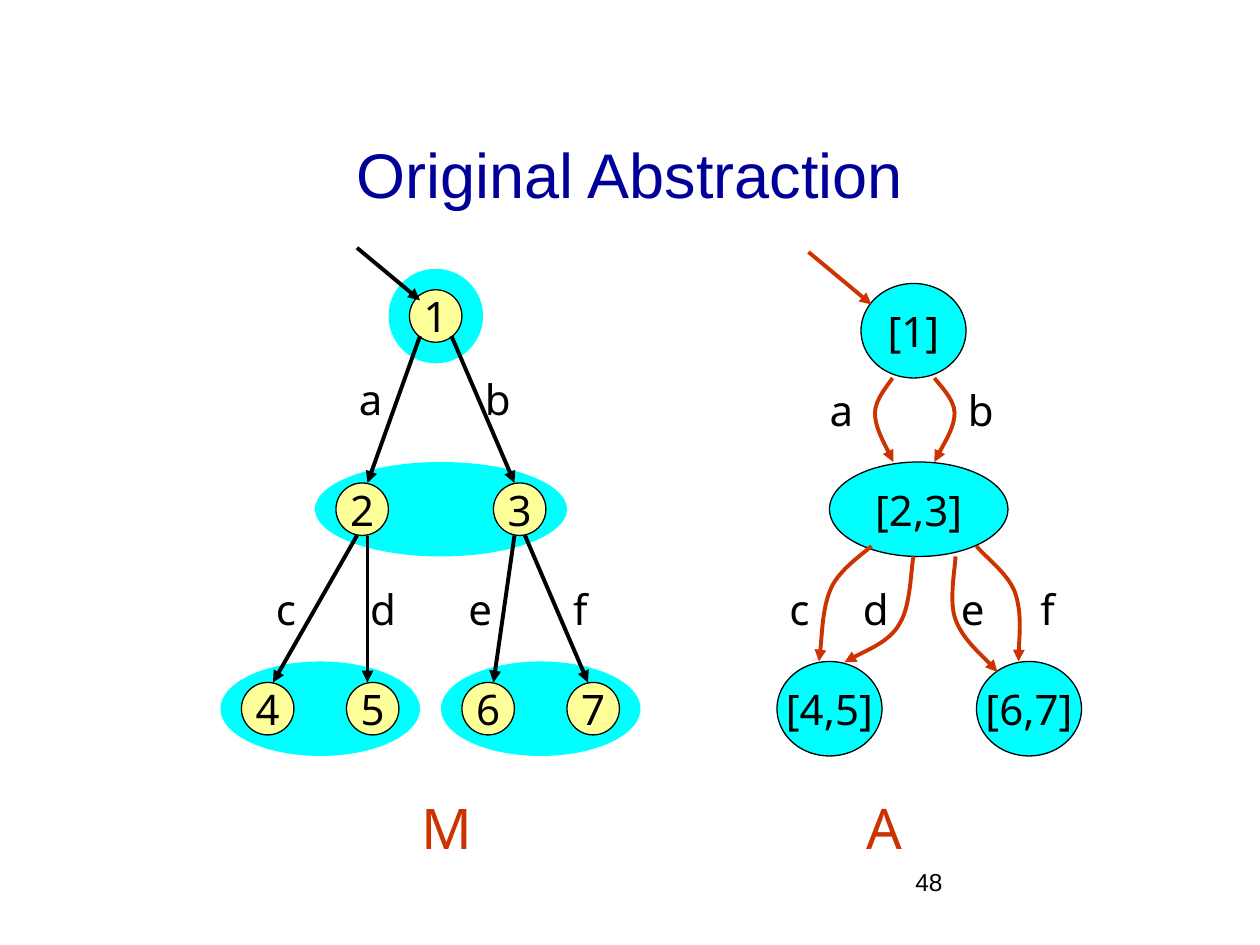
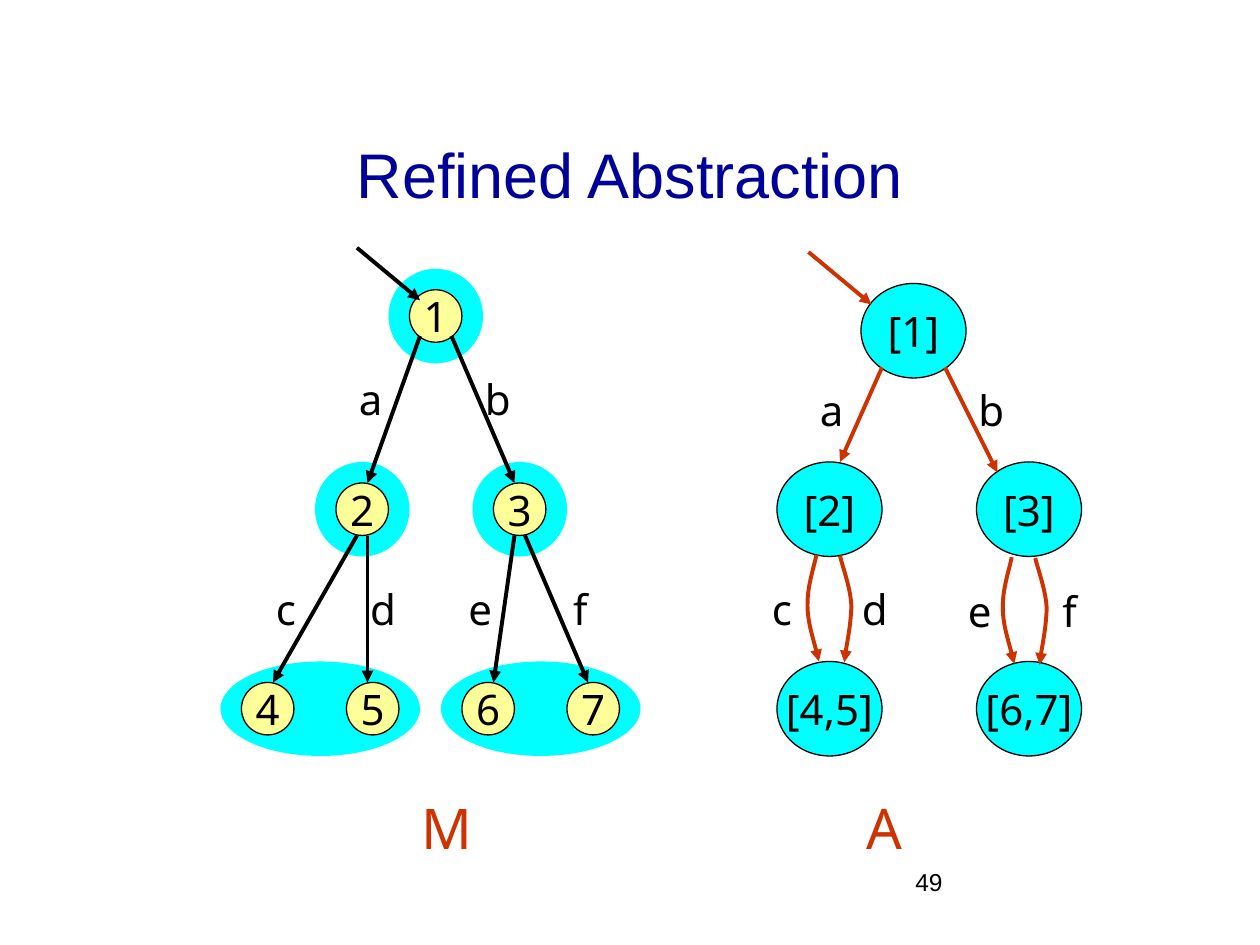
from dataclasses import dataclass

from lxml import etree
from pptx import Presentation
from pptx import util as u
from pptx.dml.color import RGBColor
from pptx.enum import shapes, text
from pptx.oxml import ns

Point = tuple[float, float]

COLORS = {
    "title": "000099",
    "ink": "000000",
    "accent": "CC3300",
    "cluster": "00FFFF",
    "state": "FFFF99",
}
TITLE_FONT = "Arial"
GRAPH_FONT = "Noto Sans"
ROW_TOPS = (153.6, 264, 378)
ROW_HEIGHT = 54
STATE_SIZE = 30
STATE_INSET = 12
ABSTRACT_WIDTH = 60
LABEL_WIDTHS = {"a": 30, "b": 29.5, "c": 27.4, "d": 30, "e": 27.4, "f": 24.5}


@dataclass(frozen=True)
class Oval:
    left: float
    top: float
    width: float = ABSTRACT_WIDTH
    height: float = ROW_HEIGHT
    caption: str = ""
    fill: str = "cluster"


@dataclass(frozen=True)
class Label:
    caption: str
    left: float
    top: float


@dataclass(frozen=True)
class Arrow:
    start: Point
    end: Point
    color: str = "ink"


@dataclass(frozen=True)
class Curve:
    points: tuple[Point, ...]

    def shifted(self, right: float, down: float) -> "Curve":
        return Curve(tuple((x + right, y + down) for x, y in self.points))


@dataclass(frozen=True)
class Abstraction:
    title: str
    number: int
    clusters: list[Oval]
    nodes: list[Oval]
    labels: list[Label]
    arrows: list[Arrow]
    curves: list[Curve]


def cluster(row: int, left: float, width: float = ROW_HEIGHT) -> Oval:
    return Oval(left, ROW_TOPS[row], width)


def state(caption: str, row: int, left: float) -> Oval:
    return Oval(left, ROW_TOPS[row] + STATE_INSET, STATE_SIZE, STATE_SIZE, caption, "state")


def labels_at(top: float, **lefts: float) -> list[Label]:
    return [Label(caption, left, top) for caption, left in lefts.items()]


STATES = [
    state("1", 0, 234),
    state("2", 1, 192),
    state("3", 1, 282),
    state("4", 2, 138),
    state("5", 2, 198),
    state("6", 2, 264),
    state("7", 2, 324),
]
STATE_LABELS = labels_at(210, a=198, b=270) + labels_at(330, c=150.5, d=204.5, e=260.6, f=320.4)
SHARED_CLUSTERS = [cluster(0, 222), cluster(2, 126, 114), cluster(2, 252, 114)]
SHARED_NODES = [
    Oval(492, 162, caption="[1]"),
    Oval(444, ROW_TOPS[2], caption="[4,5]"),
    Oval(558, ROW_TOPS[2], caption="[6,7]"),
]
SHARED_ARROWS = [
    Arrow((204, 141.6), (240, 171.6)),
    Arrow((240, 192), (210, 276)),
    Arrow((258, 192), (294, 276)),
    Arrow((204, 306), (156, 390)),
    Arrow((210, 306), (210, 390)),
    Arrow((294, 306), (282, 390)),
    Arrow((300, 306), (336, 390)),
    Arrow((462, 144), (498, 174), "accent"),
]
MERGED_CURVES = [
    Curve(((510, 216), (508, 219.6), (500, 228), (500, 236), (500, 244), (508, 258.5), (510.5, 264))),
    Curve(((534, 216), (536.5, 219.6), (545.5, 228), (545.5, 236), (545.5, 244), (536.5, 258.5), (534, 264))),
    Curve(((498, 312), (494, 316), (480, 325), (475, 336), (470, 347), (469.5, 369.5), (468, 378))),
    Curve(((522, 318), (520.5, 324.5), (520.5, 346.5), (514, 356.5), (508.5, 366.5), (489, 374.5), (482.5, 378.5))),
    Curve(((546, 318), (546, 324), (542, 343.5), (546, 354), (550, 365), (565, 378), (570, 384))),
    Curve(((558, 312), (561.5, 317), (576, 327.5), (580, 338.5), (584, 350), (582, 370), (582, 378))),
]
SPLIT_CURVES = [
    Curve(((466.5, 317), (466, 321), (461.5, 334), (461.5, 344), (461, 354), (466.5, 371), (468, 378))),
    Curve(((480, 317.5), (481, 322.5), (486.5, 337), (486.5, 347), (486, 358.5), (483, 372), (482.5, 378.5))),
]

ABSTRACTIONS = [
    Abstraction(
        "Original Abstraction",
        48,
        [cluster(1, 180, 144)],
        [Oval(474, ROW_TOPS[1], 102, caption="[2,3]")],
        labels_at(216, a=467, b=546) + labels_at(330, c=444, d=486, e=542, f=587.5),
        [],
        MERGED_CURVES,
    ),
    Abstraction(
        "Refined Abstraction",
        49,
        [cluster(1, 180), cluster(1, 270)],
        [Oval(444, ROW_TOPS[1], caption="[2]"), Oval(558, ROW_TOPS[1], caption="[3]")],
        labels_at(216, a=461.5, b=552) + labels_at(330, c=434, d=485.5) + labels_at(331.2, e=546, f=600),
        [Arrow((504, 210), (480, 264), "accent"), Arrow((540, 210), (570, 270), "accent")],
        SPLIT_CURVES + [curve.shifted(111.6, 1.4) for curve in SPLIT_CURVES],
    ),
]


def rgb(color: str) -> RGBColor:
    return RGBColor.from_string(COLORS[color])


def write(box, caption: str, size: float, color: str = "ink", font: str = GRAPH_FONT,
          centred: bool = False, wrap: bool = False):
    frame = box.text_frame
    frame.word_wrap = wrap
    frame.vertical_anchor = text.MSO_ANCHOR.MIDDLE if centred else text.MSO_ANCHOR.TOP
    para = frame.paragraphs[0]
    para.text = caption
    para.alignment = text.PP_ALIGN.CENTER if centred else text.PP_ALIGN.LEFT
    para.font.name = font
    para.font.size = u.Pt(size)
    para.font.color.rgb = rgb(color)
    return para


def add_text(page, left: float, top: float, width: float, height: float,
             caption: str, size: float, **style):
    box = page.shapes.add_textbox(u.Pt(left), u.Pt(top), u.Pt(width), u.Pt(height))
    return write(box, caption, size, **style)


def add_oval(page, oval: Oval) -> None:
    shape = page.shapes.add_shape(
        shapes.MSO_SHAPE.OVAL, u.Pt(oval.left), u.Pt(oval.top), u.Pt(oval.width), u.Pt(oval.height)
    )
    shape.shadow.inherit = False
    shape.fill.solid()
    shape.fill.fore_color.rgb = rgb(oval.fill)
    if oval.caption:
        shape.line.color.rgb = rgb("ink")
        shape.line.width = u.Pt(0.75)
        write(shape, oval.caption, 24, centred=True)
    else:
        shape.line.fill.background()


def style_arrow(shape, color: str) -> None:
    shape.line.color.rgb = rgb(color)
    shape.line.width = u.Pt(2.25)
    outline = shape.element.spPr.find(ns.qn("a:ln"))
    etree.SubElement(outline, ns.qn("a:tailEnd"), type="triangle")


def add_arrow(page, arrow: Arrow) -> None:
    ends = [u.Pt(value) for value in arrow.start + arrow.end]
    connector = page.shapes.add_connector(shapes.MSO_CONNECTOR.STRAIGHT, *ends)
    style_arrow(connector, arrow.color)
    etree.SubElement(connector.element.spPr, ns.qn("a:effectLst"))


def add_curve(page, curve: Curve) -> None:
    start, *others = [(u.Pt(x), u.Pt(y)) for x, y in curve.points]
    builder = page.shapes.build_freeform(*start, scale=1.0)
    builder.add_line_segments(others, close=False)
    shape = builder.convert_to_shape()
    segments = list(shape.element.iter(ns.qn("a:lnTo")))
    for first in range(0, len(segments), 3):
        bezier = etree.Element(ns.qn("a:cubicBezTo"))
        segments[first].addprevious(bezier)
        for segment in segments[first:first + 3]:
            bezier.append(segment[0])
            segment.getparent().remove(segment)
    shape.shadow.inherit = False
    shape.fill.background()
    style_arrow(shape, "accent")


def add_abstraction(deck, abstraction: Abstraction) -> None:
    page = deck.slides.add_slide(deck.slide_layouts[6])
    add_text(page, 516, 492, 150, 36, str(abstraction.number), 14, font=TITLE_FONT, wrap=True)
    add_text(page, 54, 54, 612, 90, abstraction.title, 36, color="title",
             font=TITLE_FONT, centred=True, wrap=True)
    for oval in SHARED_CLUSTERS + abstraction.clusters + STATES + SHARED_NODES + abstraction.nodes:
        add_oval(page, oval)
    for arrow in SHARED_ARROWS + abstraction.arrows:
        add_arrow(page, arrow)
    for curve in abstraction.curves:
        add_curve(page, curve)
    for label in STATE_LABELS + abstraction.labels:
        add_text(page, label.left, label.top, LABEL_WIDTHS[label.caption], 36, label.caption, 24)
    add_text(page, 234, 450, 52, 45, "M", 32, color="accent")
    para = add_text(page, 438, 450, 109.4, 45, "A", 32, color="accent", wrap=True)
    para._p.get_or_add_pPr().set("marL", str(u.Pt(50)))


def main() -> None:
    deck = Presentation()
    deck.slide_width, deck.slide_height = u.Pt(720), u.Pt(540)
    for abstraction in ABSTRACTIONS:
        add_abstraction(deck, abstraction)
    deck.save("out.pptx")


if __name__ == "__main__":
    main()
